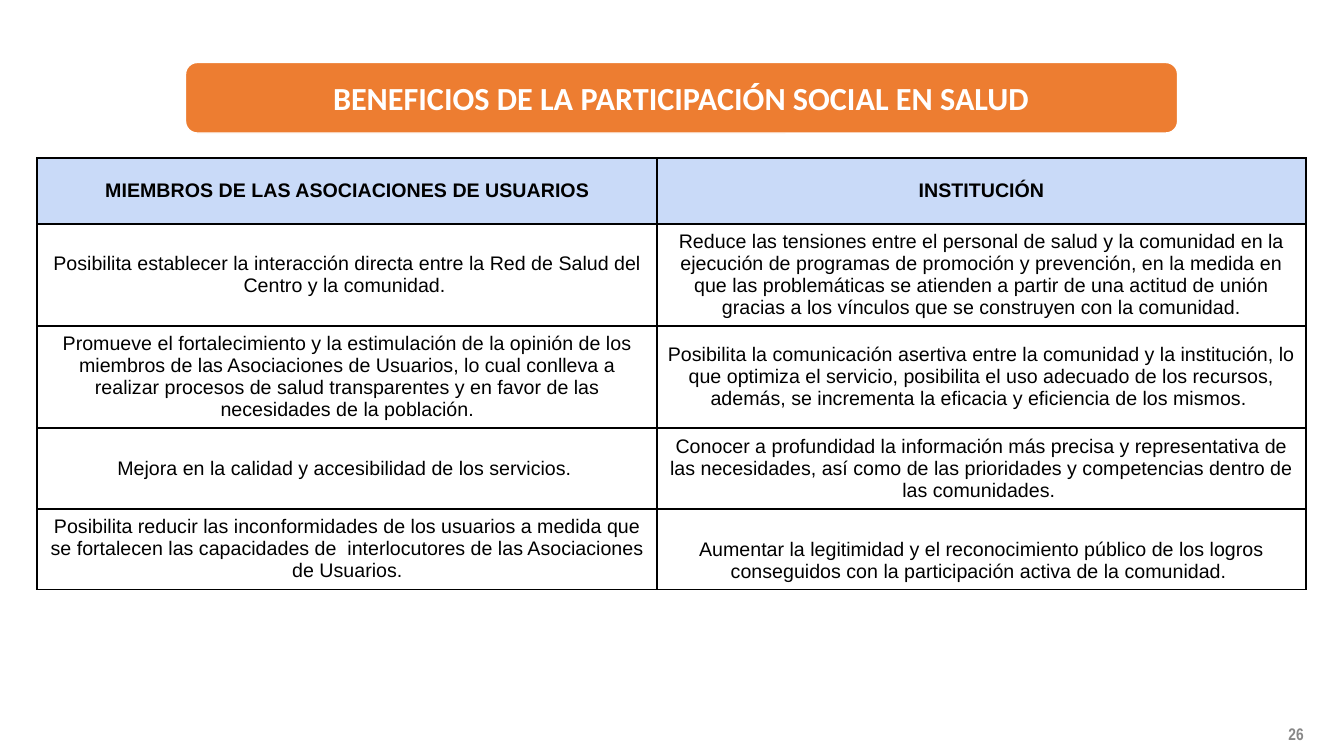
import pptx
import pptx.dml.color
import pptx.enum.shapes
import pptx.enum.text
import pptx.oxml
import pptx.oxml.ns
import pptx.util
from dataclasses import dataclass

Anchor = pptx.enum.text.MSO_ANCHOR
WIDTH, HEIGHT = 13.33, 7.5


@dataclass(frozen=True)
class Theme:
    """Colours, fonts and type sizes of the slide."""
    banner: str = "ED7D31"
    header: str = "C9DAF8"
    paper: str = "FFFFFF"
    ink: str = "000000"
    muted: str = "888888"
    title_font: str = "Calibri"
    body_font: str = "Arial"
    number_font: str = "Arial Narrow"
    title_size: int = 23
    body_size: int = 14
    number_size: int = 12
    border: float = 1.5


THEME = Theme()
COLUMNS = (6.15, 6.43)
ROWS = (0.65, 1.01, 1.01, 0.8, 0.8)
BENEFITS = [
    ("MIEMBROS DE LAS ASOCIACIONES DE USUARIOS", "INSTITUCIÓN"),
    ("Posibilita establecer la interacción directa entre la Red de Salud del Centro y la comunidad. ",
     "Reduce las tensiones entre el personal de salud y la comunidad en la ejecución de programas "
     "de promoción y prevención, en la medida en que las problemáticas se atienden a partir de una "
     "actitud de unión gracias a los vínculos que se construyen con la comunidad."),
    ("Promueve el fortalecimiento y la estimulación de la opinión de los miembros de las Asociaciones "
     "de Usuarios, lo cual conlleva a realizar procesos de salud transparentes y en favor de las "
     "necesidades de la población.",
     "Posibilita la comunicación asertiva entre la comunidad y la institución, lo que optimiza el "
     "servicio, posibilita el uso adecuado de los recursos, además, se incrementa la eficacia y "
     "eficiencia de los mismos. "),
    ("Mejora en la calidad y accesibilidad de los servicios. ",
     "Conocer a profundidad la información más precisa y representativa de las necesidades, así como "
     "de las prioridades y competencias dentro de las comunidades. "),
    ("Posibilita reducir las inconformidades de los usuarios a medida que se fortalecen las "
     "capacidades de  interlocutores de las Asociaciones de Usuarios.",
     "Aumentar la legitimidad y el reconocimiento público de los logros conseguidos con la "
     "participación activa de la comunidad. "),
]


def rgb(color):
    """Return a colour from its hex digits."""
    return pptx.dml.color.RGBColor.from_string(color)


def box(left, top, width, height):
    """Turn shares of the slide's size into lengths."""
    return [pptx.util.Inches(round(share * side, 2)) for share, side in
            ((left, WIDTH), (top, HEIGHT), (width, WIDTH), (height, HEIGHT))]


def write(tf, text, font, size, color, bold):
    """Write one centred paragraph."""
    tf.word_wrap = True
    p = tf.paragraphs[0]
    p.text = text
    p.alignment = pptx.enum.text.PP_ALIGN.CENTER
    p.font.name, p.font.size, p.font.bold = font, pptx.util.Pt(size), bold
    p.font.color.rgb = rgb(color)


def add_banner(slide, text, area):
    """Set the title over a rounded banner."""
    sp = slide.shapes.add_shape(pptx.enum.shapes.MSO_SHAPE.ROUNDED_RECTANGLE, *area)
    sp.shadow.inherit = False
    sp.fill.solid()
    sp.fill.fore_color.rgb = rgb(THEME.banner)
    sp.line.color.rgb = rgb(THEME.paper)
    sp.line.width = pptx.util.Pt(1)
    title = slide.shapes.title
    title.left, title.top, title.width, title.height = area
    slide.shapes._spTree.append(title._element)
    tf = title.text_frame
    tf.auto_size = pptx.enum.text.MSO_AUTO_SIZE.NONE
    tf.vertical_anchor = Anchor.MIDDLE
    write(tf, text, THEME.title_font, THEME.title_size, THEME.paper, True)


def add_borders(cell):
    """Draw the four borders of a cell."""
    tc_pr = cell._tc.get_or_add_tcPr()
    width = pptx.util.Pt(THEME.border)
    for i, side in enumerate(("lnL", "lnR", "lnT", "lnB")):
        tc_pr.insert(i, pptx.oxml.parse_xml(
            f'<a:{side} {pptx.oxml.ns.nsdecls("a")} w="{width}"><a:solidFill>'
            f'<a:srgbClr val="{THEME.ink}"/></a:solidFill></a:{side}>'))


def fill_cell(cell, text, is_header, anchor):
    """Write and format one table cell."""
    cell.fill.solid()
    cell.fill.fore_color.rgb = rgb(THEME.header if is_header else THEME.paper)
    cell.margin_left = cell.margin_right = pptx.util.Inches(0.07)
    cell.margin_top = cell.margin_bottom = pptx.util.Inches(0.07)
    cell.vertical_anchor = anchor
    write(cell.text_frame, text, THEME.body_font, THEME.body_size, THEME.ink, is_header)
    add_borders(cell)


def add_benefits(slide, area):
    """Add the table of benefits."""
    table = slide.shapes.add_table(len(ROWS), len(COLUMNS), *area).table
    table.horz_banding = False
    for column, width in zip(table.columns, COLUMNS):
        column.width = pptx.util.Inches(width)
    for row, height in zip(table.rows, ROWS):
        row.height = pptx.util.Inches(height)
    last = (len(ROWS) - 1, len(COLUMNS) - 1)
    for r, texts in enumerate(BENEFITS):
        for c, text in enumerate(texts):
            anchor = Anchor.BOTTOM if (r, c) == last else Anchor.MIDDLE
            fill_cell(table.cell(r, c), text, r == 0, anchor)


def add_number(slide, text, area):
    """Add the page number."""
    tf = slide.shapes.add_textbox(*area).text_frame
    tf.vertical_anchor = Anchor.MIDDLE
    write(tf, text, THEME.number_font, THEME.number_size, THEME.muted, True)


def main():
    """Build and save the slide."""
    prs = pptx.Presentation()
    prs.slide_width, prs.slide_height = pptx.util.Inches(WIDTH), pptx.util.Inches(HEIGHT)
    slide = prs.slides.add_slide(prs.slide_layouts[5])
    add_number(slide, "26", box(0.9355, 0.944, 0.058, 0.053))
    add_banner(slide, "BENEFICIOS DE LA PARTICIPACIÓN SOCIAL EN SALUD", box(0.138, 0.083, 0.738, 0.094))
    add_benefits(slide, box(0.028, 0.21, 0.944, 0.57))
    prs.save("out.pptx")


if __name__ == "__main__":
    main()
